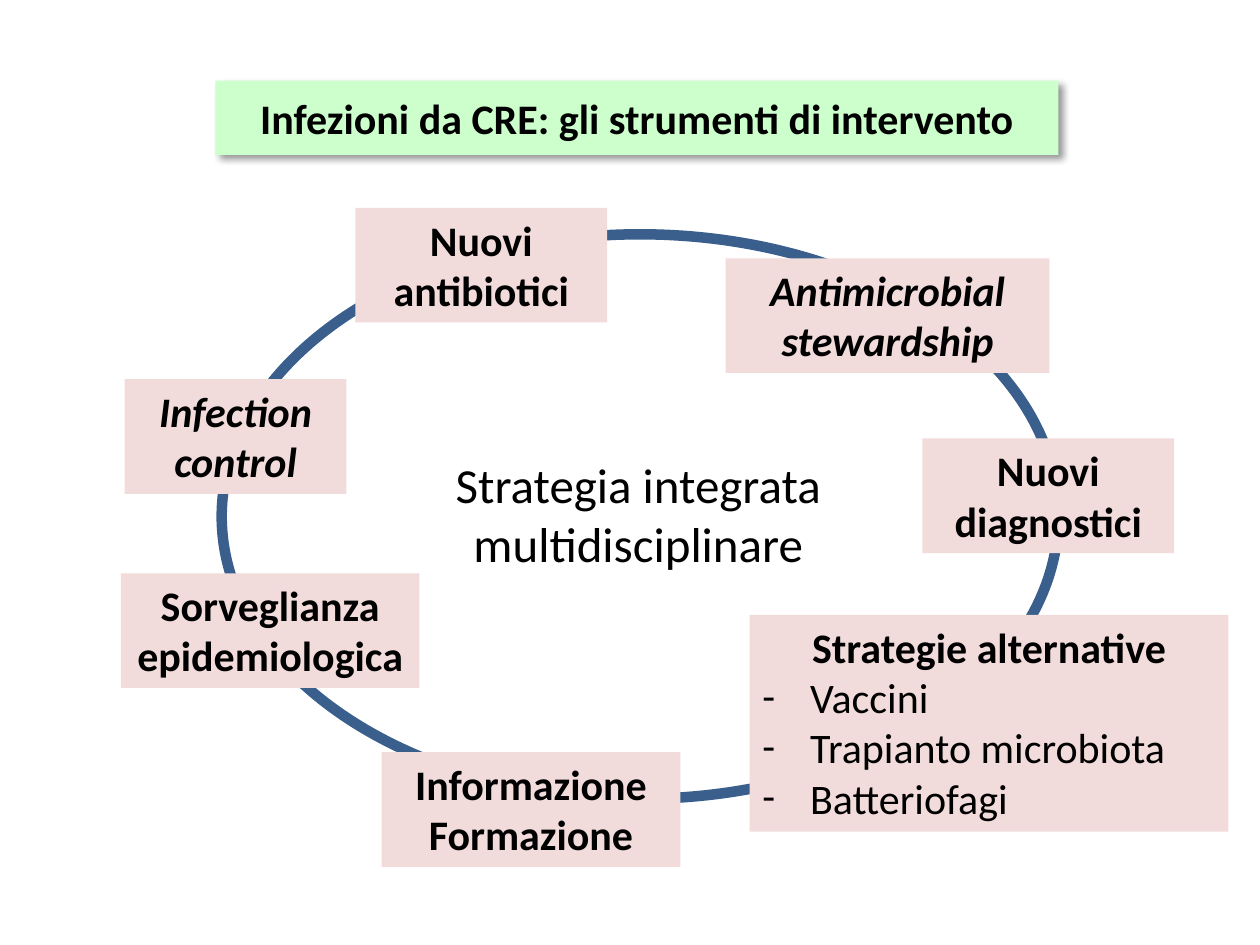
from lxml import etree
from pptx import Presentation
from pptx.dml.color import RGBColor
from pptx.enum.shapes import MSO_SHAPE as Kind
from pptx.enum.text import MSO_ANCHOR as Anchor, MSO_AUTO_SIZE as Fit, PP_ALIGN as Align
from pptx.oxml import parse_xml
from pptx.oxml.ns import nsdecls, qn
from pptx.util import Inches, Pt

HEX = {"title": "CCFFCC", "node": "F2DCDB", "ring": "3A5F8C", "text": "000000"}
NODES = [
    ((0.99, 3.01, 1.76, 0.91), ["Infection control"], True),
    ((5.76, 2.05, 2.57, 0.91), ["Antimicrobial stewardship"], True),
    ((2.82, 1.65, 2, 0.91), ["Nuovi antibiotici"], False),
    ((0.96, 4.55, 2.37, 0.91), ["Sorveglianza", "epidemiologica"], False),
    ((7.32, 3.48, 2, 0.91), ["Nuovi diagnostici"], False),
    ((3.03, 5.97, 2.37, 0.91), ["Informazione Formazione"], False),
]


def color(name):
    return RGBColor.from_string(HEX[name])


def paint(shape, name):
    shape.fill.solid()
    shape.fill.fore_color.rgb = color(name)
    shape.line.fill.background()


def place(shape, box):
    shape.left, shape.top, shape.width, shape.height = map(Inches, box)


def write(shape, lines, size=24, bold=True, italic=False, align=Align.CENTER,
          anchor=Anchor.TOP, wrap=True):
    frame = shape.text_frame
    frame.auto_size = Fit.NONE
    frame.word_wrap = wrap
    frame.vertical_anchor = anchor
    frame.text = "\n".join(lines)
    for para in frame.paragraphs:
        para.alignment = align
        para.space_before = Pt(0)
        font = para.runs[0].font
        font.name, font.size = "Calibri", Pt(size)
        font.bold, font.italic = bold, italic
        font.color.rgb = color("text")
    return frame.paragraphs


def bullet(para, mark=None, indent=0):
    props = para._p.get_or_add_pPr()
    props.set("marL", str(Inches(indent)))
    props.set("indent", str(-Inches(indent)))
    if mark:
        etree.SubElement(props, qn("a:buFont"), typeface="Calibri")
        etree.SubElement(props, qn("a:buChar"), char=mark)
    else:
        etree.SubElement(props, qn("a:buNone"))


def banner(slide, box):
    title = slide.shapes.title
    place(title, box)
    paint(title, "title")
    write(title, ["Infezioni da CRE: gli strumenti di intervento"], anchor=Anchor.MIDDLE)
    title._element.spPr.append(parse_xml(
        f'<a:effectLst {nsdecls("a")}><a:outerShdw blurRad="{Pt(4)}" dist="{Pt(3)}" '
        'dir="2700000" algn="tl" rotWithShape="0"><a:srgbClr val="000000">'
        '<a:alpha val="40000"/></a:srgbClr></a:outerShdw></a:effectLst>'))


def ring(slide, box):
    oval = slide.shapes.add_shape(Kind.OVAL, *map(Inches, box))
    oval.shadow.inherit = False
    oval.fill.background()
    oval.line.color.rgb = color("ring")
    oval.line.width = Pt(6)


def node(slide, box, lines, italic):
    shape = slide.shapes.add_shape(Kind.RECTANGLE, *map(Inches, box))
    shape.shadow.inherit = False
    paint(shape, "node")
    write(shape, lines, italic=italic)


def center(slide, box):
    label = slide.shapes.add_textbox(*map(Inches, box))
    write(label, ["Strategia integrata", "multidisciplinare"], size=28, bold=False, wrap=False)


def options(slide, box):
    body = slide.placeholders[1]
    place(body, box)
    paint(body, "node")
    head, *items = write(body, ["Strategie alternative", "Vaccini",
                                "Trapianto microbiota", "Batteriofagi"])
    bullet(head)
    for para in items:
        para.alignment = Align.LEFT
        para.runs[0].font.bold = False
        bullet(para, "-", 0.38)
    slide.shapes._spTree.append(body._element)


def main():
    deck = Presentation()
    deck.slide_width, deck.slide_height = Inches(10), Inches(7.5)
    slide = deck.slides.add_slide(deck.slide_layouts[1])
    banner(slide, (1.71, 0.64, 6.69, 0.59))
    ring(slide, (1.76, 1.86, 6.64, 4.48))
    for box, lines, italic in NODES:
        node(slide, box, lines, italic)
    center(slide, (3.5, 3.56, 3.13, 1.04))
    options(slide, (5.95, 4.88, 3.8, 1.72))
    deck.save("out.pptx")


if __name__ == "__main__":
    main()
